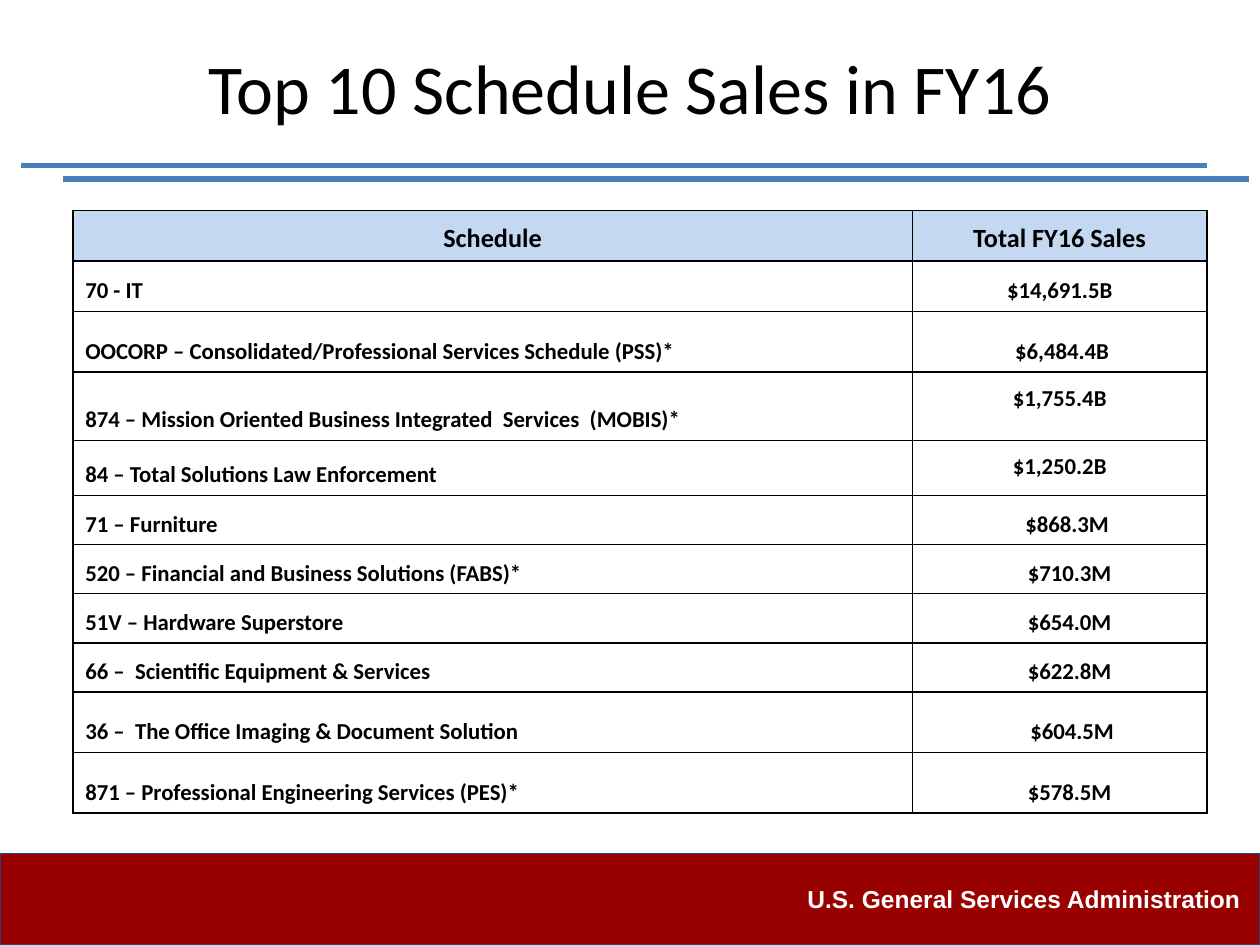
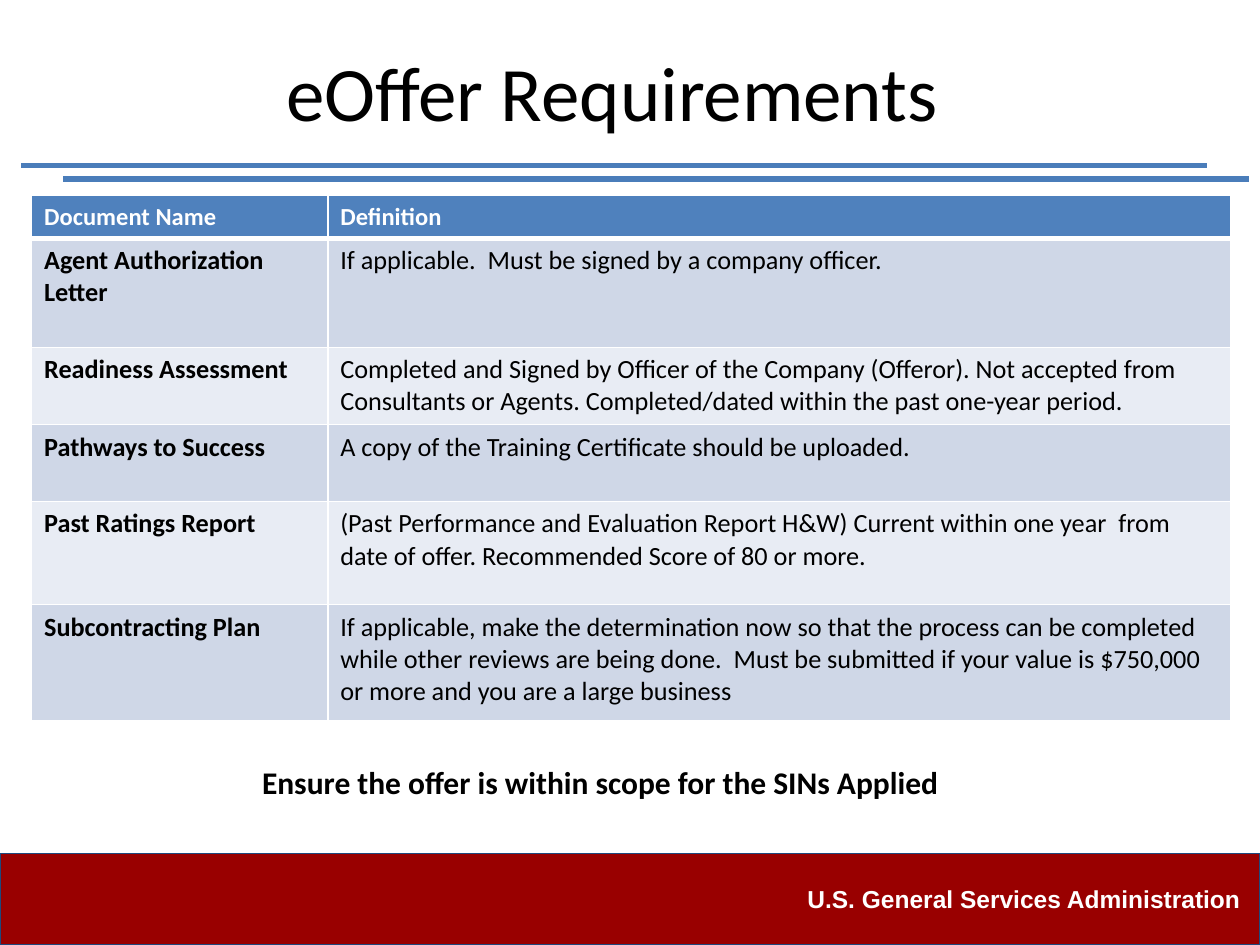
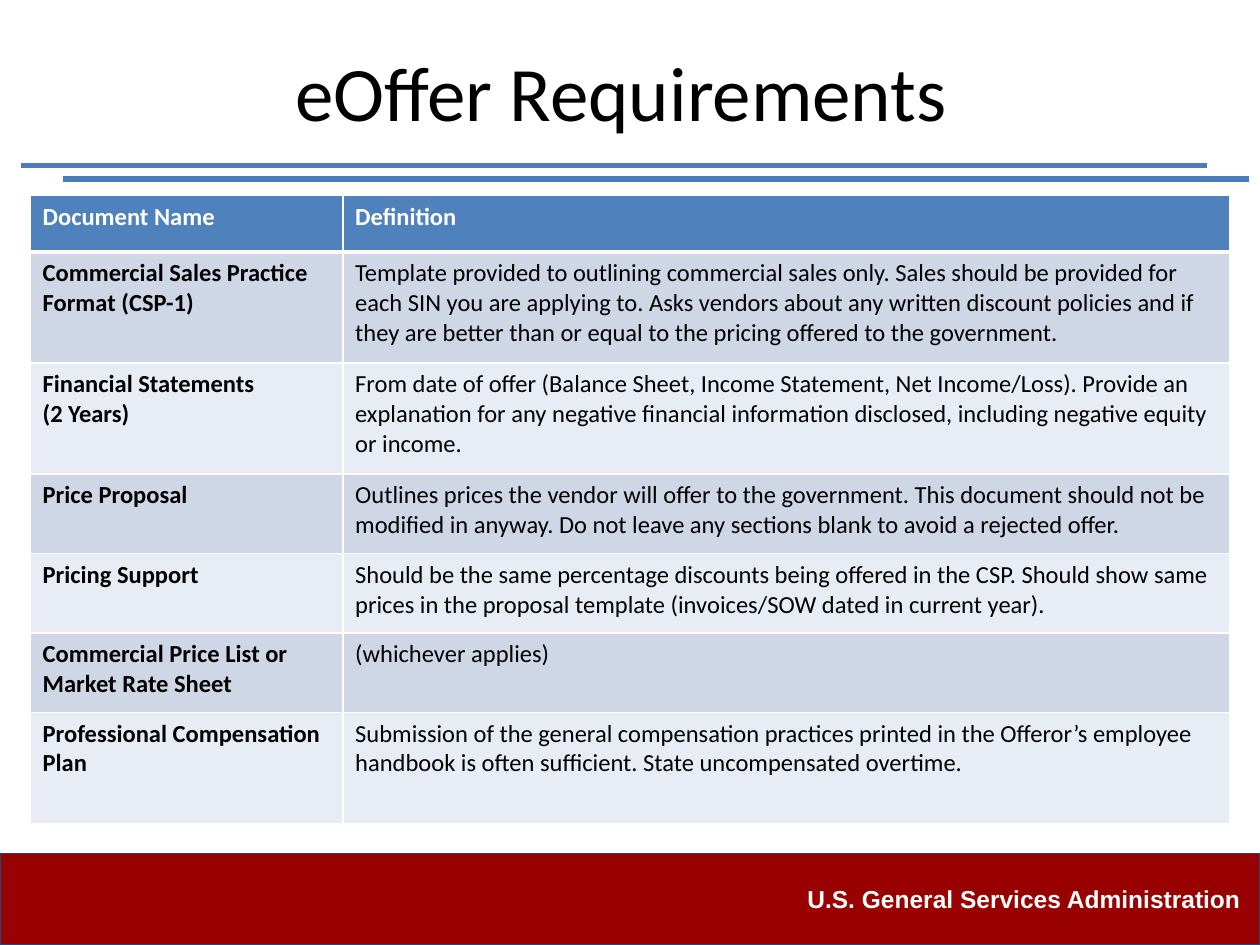
"""Build three slides on schedule sales and eOffer requirements."""
from dataclasses import dataclass

from lxml.etree import SubElement
from pptx import Presentation
from pptx.dml.color import RGBColor
from pptx.enum.shapes import MSO_CONNECTOR, MSO_SHAPE
from pptx.enum.text import MSO_ANCHOR, MSO_AUTO_SIZE, PP_ALIGN
from pptx.oxml.ns import qn
from pptx.util import Cm, Pt


@dataclass(frozen=True)
class Theme:
    font: str = "Calibri"
    footer_font: str = "Arial"
    ink: str = "000000"
    paper: str = "FFFFFF"
    rule: str = "4A7DBA"
    band: str = "990000"
    band_edge: str = "1F497D"
    sales_header: str = "C5D8F1"
    header: str = "4F81BD"
    stripes: tuple = ("CFD7E7", "E8ECF4")
    title_size: int = 44
    sales_title_size: int = 40
    note_size: int = 18
    large_size: int = 15
    label_size: int = 14
    sales_size: int = 13
    rule_width: float = 3
    thin_width: float = 1
    edge_width: float = 0.75


SLIDE_WIDTH, SLIDE_HEIGHT = 25.4, 19.05
INSET, TIGHT_INSET = 0.25, 0.13

SALES_ROWS = [
    ("70 - IT", "$14,691.5B", 0),
    ("OOCORP – Consolidated/Professional Services Schedule (PSS)*", "$6,484.4B", 0.1),
    ("874 – Mission Oriented Business Integrated  Services  (MOBIS)*", "$1,755.4B", 0),
    ("84 – Total Solutions Law Enforcement", "$1,250.2B", 0),
    ("71 – Furniture", "$868.3M", 0.3),
    ("520 – Financial and Business Solutions (FABS)*", "$710.3M", 0.4),
    ("51V – Hardware Superstore", "$654.0M", 0.4),
    ("66 –  Scientific Equipment & Services", "$622.8M", 0.4),
    ("36 –  The Office Imaging & Document Solution", "$604.5M", 0.5),
    ("871 – Professional Engineering Services (PES)*", "$578.5M", 0.4),
]
SALES_HEIGHTS = [1.02, 1.02, 1.22, 1.38, 1.11, 0.99, 0.99, 0.99, 0.99, 1.22, 1.22]
TOP_ALIGNED_SALES = ("$1,755.4B", "$1,250.2B")

OFFER_DOCUMENTS = [
    ("Agent Authorization Letter",
     "If applicable.  Must be signed by a company officer."),
    ("Readiness Assessment",
     "Completed and Signed by Officer of the Company (Offeror). Not accepted from "
     "Consultants or Agents. Completed/dated within the past one-year period."),
    ("Pathways to Success",
     "A copy of the Training Certificate should be uploaded."),
    ("Past Ratings Report",
     "(Past Performance and Evaluation Report H&W) Current within one year  from date "
     "of offer. Recommended Score of 80 or more."),
    ("Subcontracting Plan",
     "If applicable, make the determination now so that the process can be completed "
     "while other reviews are being done.  Must be submitted if your value is $750,000 "
     "or more and you are a large business"),
]
PRICING_DOCUMENTS = [
    ("Commercial Sales Practice Format (CSP-1)",
     "Template provided to outlining commercial sales only. Sales should be provided for "
     "each SIN you are applying to. Asks vendors about any written discount policies and if "
     "they are better than or equal to the pricing offered to the government."),
    ("Financial Statements\n(2 Years)",
     "From date of offer (Balance Sheet, Income Statement, Net Income/Loss). Provide an "
     "explanation for any negative financial information disclosed, including negative "
     "equity or income."),
    ("Price Proposal",
     "Outlines prices the vendor will offer to the government. This document should not be "
     "modified in anyway. Do not leave any sections blank to avoid a rejected offer."),
    ("Pricing Support",
     "Should be the same percentage discounts being offered in the CSP. Should show same "
     "prices in the proposal template (invoices/SOW dated in current year)."),
    ("Commercial Price List or Market Rate Sheet", "(whichever applies)"),
    ("Professional Compensation Plan",
     "Submission of the general compensation practices printed in the Offeror’s employee "
     "handbook is often sufficient. State uncompensated overtime."),
]


class Deck:
    """Hold the theme and the current slide, and draw each kind of element."""

    def __init__(self, theme):
        self.theme = theme
        self.presentation = Presentation()
        self.presentation.slide_width = Cm(SLIDE_WIDTH)
        self.presentation.slide_height = Cm(SLIDE_HEIGHT)
        self.slide = None

    def add_slide(self, title, size, left=1.27):
        layout = self.presentation.slide_layouts.get_by_name("Title Only")
        self.slide = self.presentation.slides.add_slide(layout)
        self.rule(0.43, 3.33)
        self.rule(1.27, 3.61)
        self.footer("U.S. General Services Administration ")
        heading = self.slide.shapes.title
        heading.left, heading.top = Cm(left), Cm(0.76)
        heading.width, heading.height = Cm(22.86), Cm(3.18)
        frame = heading.text_frame
        frame.auto_size = MSO_AUTO_SIZE.NONE
        frame.vertical_anchor = MSO_ANCHOR.TOP
        self.set_margins(frame, TIGHT_INSET)
        self.add_text(frame, title, size, align=PP_ALIGN.CENTER)

    def set_margins(self, holder, vertical, indent=0):
        holder.margin_left, holder.margin_right = Cm(INSET + indent), Cm(INSET)
        holder.margin_top = holder.margin_bottom = Cm(vertical)

    def add_text(self, frame, text, size, color=None, bold=False, align=PP_ALIGN.LEFT,
                 font=None):
        for index, line in enumerate(text.split("\n")):
            paragraph = frame.add_paragraph() if index else frame.paragraphs[0]
            paragraph.alignment = align
            run = paragraph.add_run()
            run.text = line
            run.font.name = font or self.theme.font
            run.font.size = Pt(size)
            run.font.bold = bold
            run.font.color.rgb = RGBColor.from_string(color or self.theme.ink)

    def rule(self, left, top, width=23.9):
        line = self.slide.shapes.add_connector(
            MSO_CONNECTOR.STRAIGHT, Cm(left), Cm(top), Cm(left + width), Cm(top))
        line.line.color.rgb = RGBColor.from_string(self.theme.rule)
        line.line.width = Pt(self.theme.rule_width)
        SubElement(line._element.spPr, qn("a:effectLst"))

    def footer(self, agency, height=1.85):
        band = self.slide.shapes.add_shape(
            MSO_SHAPE.RECTANGLE, 0, Cm(SLIDE_HEIGHT - height), Cm(SLIDE_WIDTH), Cm(height))
        band.shadow.inherit = False
        band.fill.solid()
        band.fill.fore_color.rgb = RGBColor.from_string(self.theme.band)
        band.line.color.rgb = RGBColor.from_string(self.theme.band_edge)
        band.line.width = Pt(self.theme.edge_width)
        band.text_frame.vertical_anchor = MSO_ANCHOR.MIDDLE
        self.set_margins(band.text_frame, INSET)
        self.add_text(band.text_frame, agency, self.theme.label_size, self.theme.paper,
                      True, PP_ALIGN.RIGHT, self.theme.footer_font)

    def note(self, text, left, top, width, height):
        frame = self.slide.shapes.add_textbox(
            Cm(left), Cm(top), Cm(width), Cm(height)).text_frame
        frame.word_wrap = True
        self.set_margins(frame, INSET)
        self.add_text(frame, text, self.theme.note_size, bold=True, align=PP_ALIGN.CENTER)

    def table(self, left, top, widths, heights):
        table = self.slide.shapes.add_table(
            len(heights), len(widths), Cm(left), Cm(top),
            Cm(sum(widths)), Cm(sum(heights))).table
        table.horz_banding = False
        for column, width in zip(table.columns, widths):
            column.width = Cm(width)
        for row, height in zip(table.rows, heights):
            row.height = Cm(height)
        return table

    def cell(self, cell, text, size, border, fill=None, color=None, bold=True,
             align=PP_ALIGN.LEFT, anchor=MSO_ANCHOR.TOP, vertical=TIGHT_INSET,
             indent=0, thick=()):
        self.set_margins(cell, vertical, indent)
        cell.vertical_anchor = anchor
        for side in ("lnL", "lnR", "lnT", "lnB"):
            width = self.theme.rule_width if side in thick else self.theme.thin_width
            edge = SubElement(cell._tc.get_or_add_tcPr(), qn(f"a:{side}"), w=str(Pt(width)))
            SubElement(SubElement(edge, qn("a:solidFill")), qn("a:srgbClr"), val=border)
        if fill:
            cell.fill.solid()
            cell.fill.fore_color.rgb = RGBColor.from_string(fill)
        else:
            cell.fill.background()
        self.add_text(cell.text_frame, text, size, color, bold, align)

    def sales_table(self):
        theme = self.theme
        table = self.table(1.47, 4.24, [16.92, 5.94], SALES_HEIGHTS)
        for column, heading in enumerate(("Schedule", "Total FY16 Sales")):
            self.cell(table.cell(0, column), heading, theme.large_size, theme.ink,
                      theme.sales_header, align=PP_ALIGN.CENTER, anchor=MSO_ANCHOR.BOTTOM)
        for row, (schedule, sales, indent) in enumerate(SALES_ROWS, 1):
            raised = sales in TOP_ALIGNED_SALES
            self.cell(table.cell(row, 0), schedule, theme.sales_size, theme.ink,
                      anchor=MSO_ANCHOR.BOTTOM)
            self.cell(table.cell(row, 1), sales, theme.sales_size, theme.ink,
                      align=PP_ALIGN.CENTER, indent=indent,
                      anchor=MSO_ANCHOR.TOP if raised else MSO_ANCHOR.BOTTOM,
                      vertical=INSET if raised else TIGHT_INSET)

    def requirements_table(self, documents, left, widths, heights, size):
        theme = self.theme
        table = self.table(left, 3.94, widths, heights)
        for column, heading in enumerate(("Document Name", "Definition")):
            self.cell(table.cell(0, column), heading, theme.label_size, theme.paper,
                      theme.header, theme.paper, thick=("lnB",))
        for row, document in enumerate(documents, 1):
            for column, text in enumerate(document):
                self.cell(table.cell(row, column), text, size, theme.paper,
                          theme.stripes[(row - 1) % 2], bold=column == 0,
                          thick=("lnT",) if row == 1 else ())


def main():
    theme = Theme()
    deck = Deck(theme)

    deck.add_slide("Top 10 Schedule Sales in FY16", theme.sales_title_size)
    deck.sales_table()

    deck.add_slide("eOffer Requirements ", theme.title_size, left=1.09)
    deck.requirements_table(OFFER_DOCUMENTS, 0.64, [5.97, 18.21],
                            [0.86, 2.2, 1.55, 1.55, 2.08, 2.34], theme.large_size)
    deck.note("Ensure the offer is within scope for the SINs Applied", 0.98, 15.14, 22.25, 1.57)

    deck.add_slide("eOffer Requirements ", theme.title_size)
    deck.requirements_table(PRICING_DOCUMENTS, 0.61, [6.3, 17.88],
                            [1.14, 2.24, 2.24, 1.6, 1.6, 1.6, 2.24], theme.label_size)

    deck.presentation.save("out.pptx")


if __name__ == "__main__":
    main()
